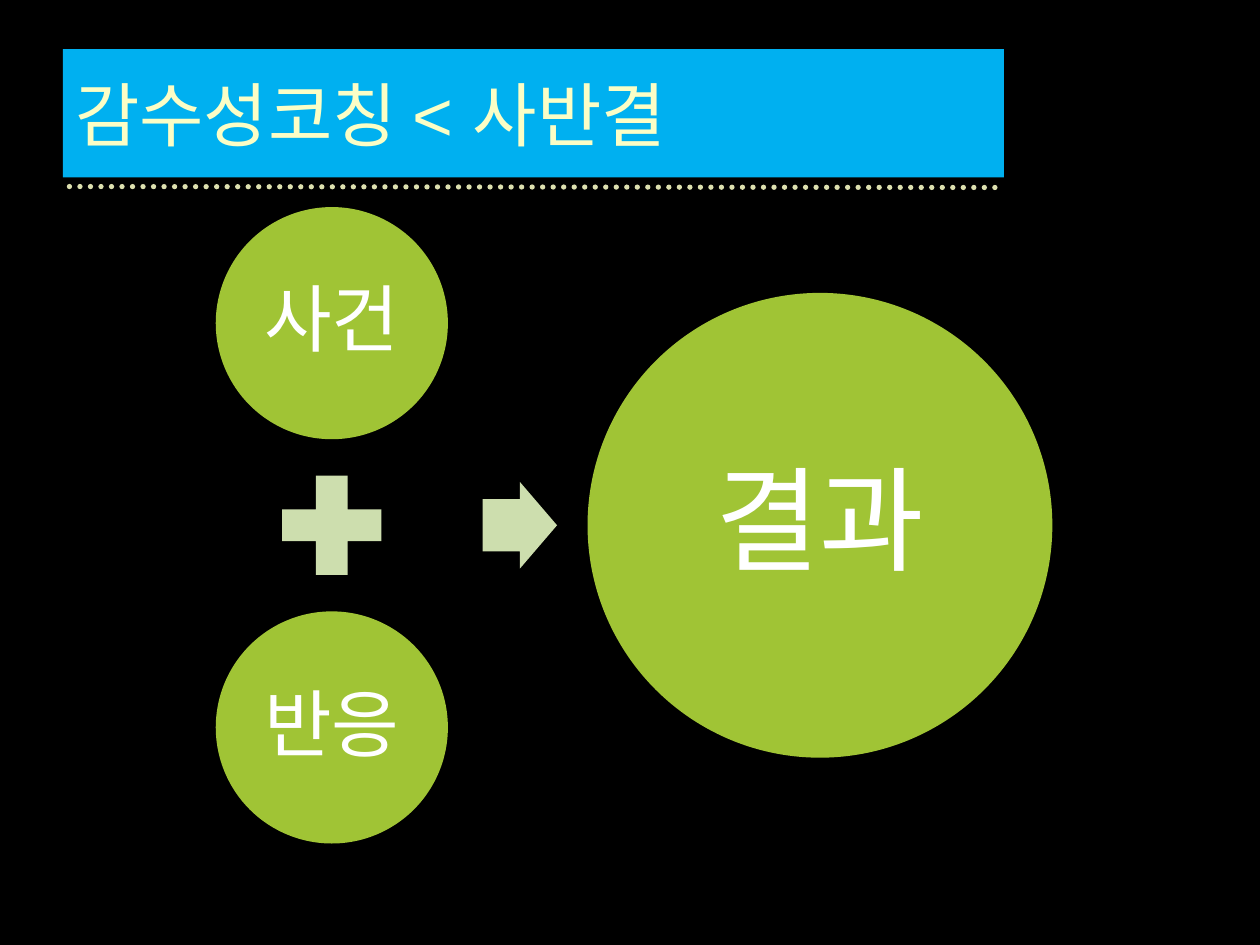
from lxml.etree import SubElement
from pptx import Presentation
from pptx.dml.color import RGBColor
from pptx.enum.dml import MSO_LINE
from pptx.enum.shapes import MSO_CONNECTOR, MSO_SHAPE
from pptx.enum.text import MSO_ANCHOR, PP_ALIGN
from pptx.oxml.ns import qn
from pptx.util import Cm, Pt

COLORS = {"bg": "000000", "banner": "00B0F0", "title": "FBFEC6", "dots": "DDE0AF",
          "circle": "A0C435", "sign": "CDDEAE", "label": "FFFFFF"}

TITLE = "감수성코칭 < 사반결"
CAUSES = ["사건", "반응"]
RESULT = "결과"

# Centimetres
BANNER = (1.27, 0.99, 18.97, 2.59)
DOTS = (1.4, 3.76, 20.24, 3.78)
MID_Y = 10.59
CAUSE_X, CAUSE_D, CAUSE_STEP = 6.69, 4.68, 8.15
RESULT_X, RESULT_D = 16.53, 9.37
PLUS_D = 2.72
ARROW_X, ARROW_W, ARROW_H = 10.48, 1.5, 1.75


def rgb(name):
    return RGBColor.from_string(COLORS[name])


def add_text(sp, text, size, color, font, align=PP_ALIGN.CENTER, inset=0.15, spacing=0.9):
    tf = sp.text_frame
    tf.word_wrap = True
    tf.vertical_anchor = MSO_ANCHOR.MIDDLE
    tf.margin_left = tf.margin_right = tf.margin_top = tf.margin_bottom = Cm(inset)
    p = tf.paragraphs[0]
    p.alignment = align
    p.line_spacing = spacing
    r = p.add_run()
    r.text = text
    r.font.size = Pt(size)
    r.font.name = font
    r.font.color.rgb = rgb(color)


def add_shape(s, kind, x, y, w, h, fill):
    sp = s.shapes.add_shape(kind, Cm(x), Cm(y), Cm(w), Cm(h))
    sp.shadow.inherit = False
    sp.fill.solid()
    sp.fill.fore_color.rgb = rgb(fill)
    sp.line.fill.background()
    return sp


def add_centred(s, kind, cx, cy, w, h, fill):
    return add_shape(s, kind, cx - w / 2, cy - h / 2, w, h, fill)


def add_dots(s, x1, y1, x2, y2):
    line = s.shapes.add_connector(MSO_CONNECTOR.STRAIGHT, Cm(x1), Cm(y1), Cm(x2), Cm(y2))
    line.line.color.rgb = rgb("dots")
    line.line.width = Pt(3)
    line.line.dash_style = MSO_LINE.ROUND_DOT
    sp_pr = line._element.spPr
    sp_pr.find(qn("a:ln")).set("cap", "rnd")
    SubElement(sp_pr, qn("a:effectLst"))


def main():
    prs = Presentation()
    prs.slide_width, prs.slide_height = Cm(25.4), Cm(19.05)
    s = prs.slides.add_slide(prs.slide_layouts[6])
    s.background.fill.solid()
    s.background.fill.fore_color.rgb = rgb("bg")

    add_dots(s, *DOTS)
    banner = add_shape(s, MSO_SHAPE.RECTANGLE, *BANNER, "banner")
    add_text(banner, TITLE, 40, "title", "Arial", align=PP_ALIGN.LEFT, inset=0.25, spacing=1.0)

    for i, cause in enumerate(CAUSES):
        cy = MID_Y + (i - (len(CAUSES) - 1) / 2) * CAUSE_STEP
        sp = add_centred(s, MSO_SHAPE.OVAL, CAUSE_X, cy, CAUSE_D, CAUSE_D, "circle")
        add_text(sp, cause, 42, "label", "Noto Sans")

    add_centred(s, MSO_SHAPE.MATH_PLUS, CAUSE_X, MID_Y, PLUS_D, PLUS_D, "sign")
    arrow = add_centred(s, MSO_SHAPE.RIGHT_ARROW, ARROW_X, MID_Y, ARROW_W, ARROW_H, "sign")
    arrow.adjustments[0] = 0.6
    arrow.adjustments[1] = 0.5

    sp = add_centred(s, MSO_SHAPE.OVAL, RESULT_X, MID_Y, RESULT_D, RESULT_D, "circle")
    add_text(sp, RESULT, 65, "label", "Noto Sans", inset=0.23)

    prs.save("out.pptx")


if __name__ == "__main__":
    main()
